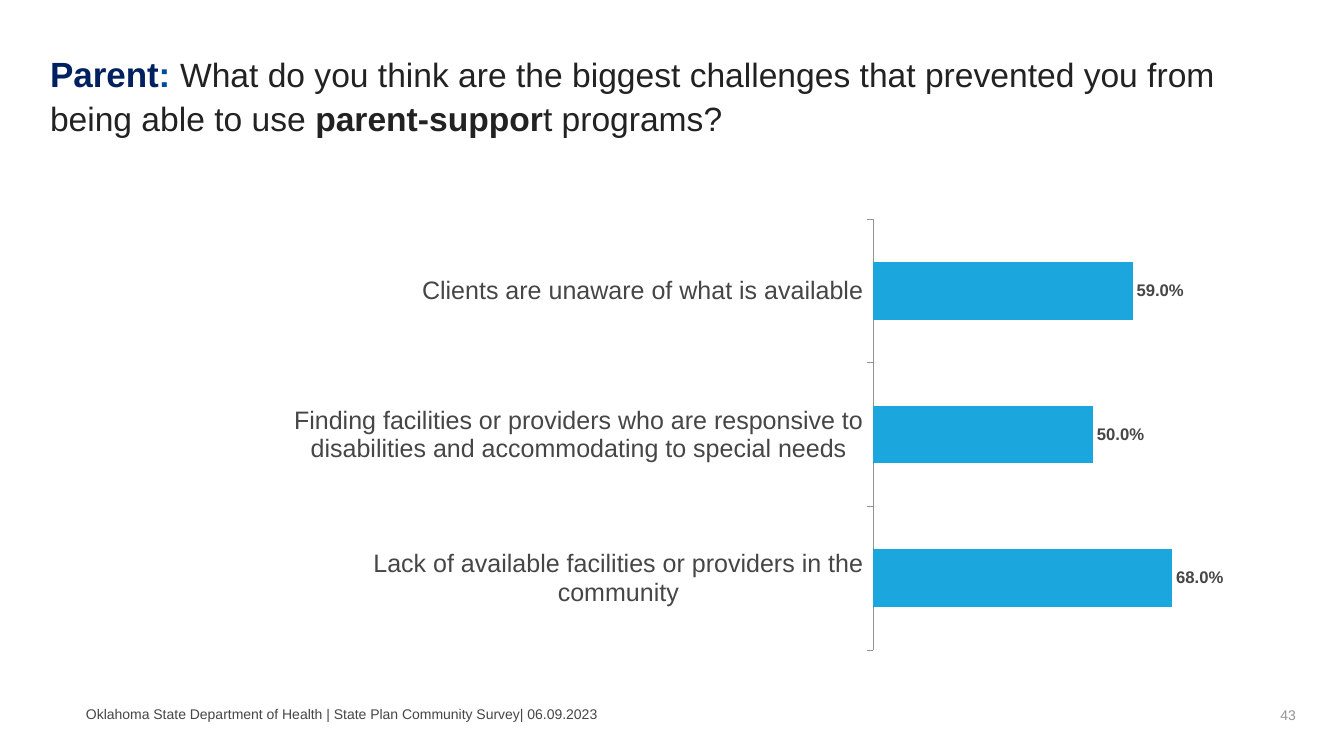
import pptx
import pptx.chart.data
import pptx.dml.color
import pptx.enum.chart
import pptx.enum.text
import pptx.util
from lxml import etree

COLORS = {"navy": "002060", "blue": "004C99", "title": "222222",
          "text": "464646", "grey": "949494", "bar": "1CA6DE"}


class SlideBuilder:
    """Holds the style and the current slide, with lengths given in px."""

    font = "Arial"
    scale = 12192000 / 1344

    def __init__(self, prs):
        prs.slide_width, prs.slide_height = self.emu(1344, 756)
        self.s = prs.slides.add_slide(prs.slide_layouts[6])

    def emu(self, *lengths):
        return [pptx.util.Emu(round(n * self.scale)) for n in lengths]

    def rgb(self, name):
        return pptx.dml.color.RGBColor.from_string(COLORS[name])

    def style(self, font, size, color, bold=False):
        font.name = self.font
        font.size = pptx.util.Pt(size)
        font.bold = bold
        font.color.rgb = self.rgb(color)

    def text_box(self, box, left_inset, anchor):
        tf = self.s.shapes.add_textbox(*self.emu(*box)).text_frame
        tf.word_wrap = True
        tf.vertical_anchor = anchor
        tf.margin_left, tf.margin_right, tf.margin_top, tf.margin_bottom = self.emu(
            left_inset, 10, 5, 5)
        return tf

    def title(self, box, runs):
        tf = self.text_box(box, 0, pptx.enum.text.MSO_ANCHOR.TOP)
        p = tf.paragraphs[0]
        p.line_spacing = 1.07
        for text, size, color, bold in runs:
            r = p.add_run()
            r.text = text
            self.style(r.font, size, color, bold)

    def footer(self, box, text, color, left_inset=0, align=pptx.enum.text.PP_ALIGN.LEFT):
        tf = self.text_box(box, left_inset, pptx.enum.text.MSO_ANCHOR.MIDDLE)
        p = tf.paragraphs[0]
        p.text = text
        p.alignment = align
        self.style(p.font, 10, color)

    def bar_chart(self, box, plot, values, maximum):
        data = pptx.chart.data.CategoryChartData(number_format="0.0%")
        data.categories = list(values)
        data.add_series("Series 1", list(values.values()))
        chart = self.s.shapes.add_chart(
            pptx.enum.chart.XL_CHART_TYPE.BAR_CLUSTERED, *self.emu(*box), data).chart
        chart.has_legend = False
        chart.has_title = False
        self.style(chart.font, 18, "text")

        axis = chart.category_axis
        axis.major_tick_mark = pptx.enum.chart.XL_TICK_MARK.OUTSIDE
        axis.format.line.color.rgb = self.rgb("grey")
        axis.format.line.width = pptx.util.Pt(0.5)
        self.style(axis.tick_labels.font, 18, "text")

        axis = chart.value_axis
        axis.visible = False
        axis.has_major_gridlines = False
        axis.minimum_scale, axis.maximum_scale = 0, maximum

        bars = chart.plots[0]
        bars.gap_width = 150
        bars.vary_by_categories = False
        fill = bars.series[0].format.fill
        fill.solid()
        fill.fore_color.rgb = self.rgb("bar")
        bars.has_data_labels = True
        labels = bars.data_labels
        labels.show_value = True
        labels.number_format = "0.0%"
        labels.number_format_is_linked = False
        labels.position = pptx.enum.chart.XL_LABEL_POSITION.OUTSIDE_END
        self.style(labels.font, 12, "text", True)
        self.place_plot(chart, box, plot)

    def place_plot(self, chart, box, plot):
        left, top, width, height = box
        shares = {"x": (plot[0] - left) / width, "y": (plot[1] - top) / height,
                  "w": plot[2] / width, "h": plot[3] / height}
        area = chart.plots[0]._element.getparent()
        ns = etree.QName(area).namespace
        for old in area.findall(f"{{{ns}}}layout"):
            area.remove(old)
        layout = etree.Element(f"{{{ns}}}layout")
        manual = etree.SubElement(layout, f"{{{ns}}}manualLayout")
        settings = {"layoutTarget": "inner", "xMode": "edge", "yMode": "edge"}
        settings.update({name: f"{share:.4f}" for name, share in shares.items()})
        for name, value in settings.items():
            etree.SubElement(manual, f"{{{ns}}}{name}").set("val", value)
        area.insert(0, layout)


def main():
    prs = pptx.Presentation()
    slide = SlideBuilder(prs)
    slide.title((50, 45, 1224, 93), [
        ("Parent", 25, "navy", True),
        (": ", 25, "blue", True),
        ("What do you think are the biggest challenges that prevented you from "
         "being able to use ", 24, "title", False),
        ("parent-suppor", 24, "title", True),
        ("t programs?", 24, "title", False),
    ])
    slide.footer((1004, 704, 302, 22), "43", "grey", 10, pptx.enum.text.PP_ALIGN.RIGHT)
    slide.footer((86, 703, 897, 22),
                 "Oklahoma State Department of Health | State Plan Community Survey| 06.09.2023",
                 "text")
    slide.bar_chart((294, 211, 951, 448), (871, 219, 354, 431), {
        "Lack of available facilities or providers in the community": 0.68,
        "Finding facilities or providers who are responsive to disabilities "
        "and accommodating to special needs": 0.5,
        "Clients are unaware of what is available": 0.59,
    }, 0.8)
    prs.save("out.pptx")


if __name__ == "__main__":
    main()
